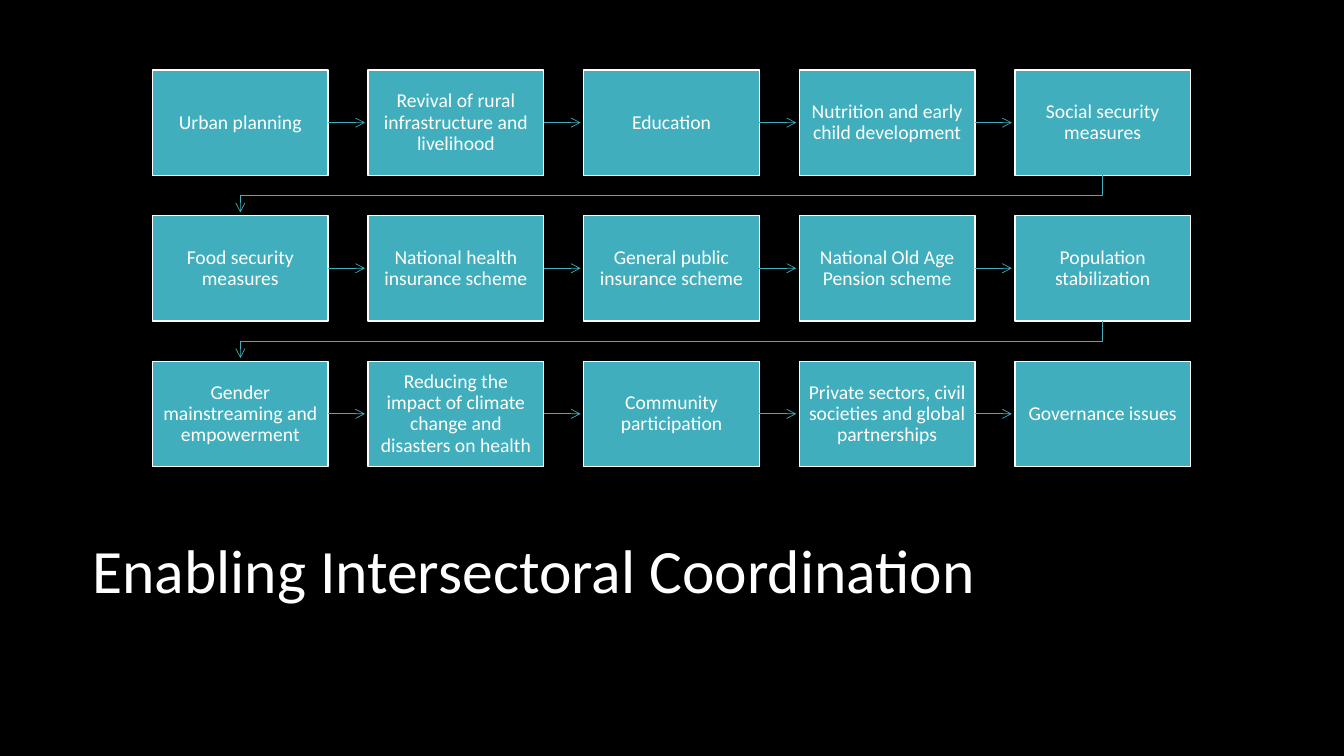
from lxml import etree
from pptx import Presentation
from pptx.dml.color import RGBColor
from pptx.enum.shapes import MSO_CONNECTOR, MSO_SHAPE
from pptx.enum.text import MSO_ANCHOR, MSO_AUTO_SIZE, PP_ALIGN
from pptx.oxml.ns import qn
from pptx.util import Pt

RECTANGLE = MSO_SHAPE.RECTANGLE
STRAIGHT = MSO_CONNECTOR.STRAIGHT
TOP, MIDDLE = MSO_ANCHOR.TOP, MSO_ANCHOR.MIDDLE
LEFT, CENTER = PP_ALIGN.LEFT, PP_ALIGN.CENTER
NO_AUTOFIT = MSO_AUTO_SIZE.NONE

BLACK = RGBColor(0x00, 0x00, 0x00)
WHITE = RGBColor(0xFF, 0xFF, 0xFF)
TEAL = RGBColor(0x41, 0xAE, 0xBD)
FONT = "Calibri"
RIGHT_SIDE = 3

# Grid of sectors, in points
GRID_LEFT, GRID_TOP = 109, 50
BOX_WIDTH, BOX_HEIGHT = 125.4, 75.2
COLUMN_STEP, ROW_STEP = 154, 104
ARROW_GAP = 2.3

SECTOR_ROWS = [
    ["Urban planning",
     "Revival of rural infrastructure and livelihood",
     "Education",
     "Nutrition and early child development",
     "Social security measures"],
    ["Food security measures",
     "National health insurance scheme",
     "General public insurance scheme",
     "National Old Age Pension scheme",
     "Population stabilization"],
    ["Gender mainstreaming and empowerment",
     "Reducing the impact of climate change and disasters on health",
     "Community participation",
     "Private sectors, civil societies and global partnerships",
     "Governance issues"],
]


def write_text(frame, text, size, alignment, anchor, inset):
    frame.word_wrap = True
    frame.auto_size = NO_AUTOFIT
    frame.vertical_anchor = anchor
    frame.margin_left = frame.margin_right = Pt(inset)
    frame.margin_top = frame.margin_bottom = Pt(inset)
    frame.text = text
    paragraph = frame.paragraphs[0]
    paragraph.alignment = alignment
    paragraph.line_spacing = 0.9
    paragraph.font.name = FONT
    paragraph.font.size = Pt(size)
    paragraph.font.color.rgb = WHITE


def add_title(slide, text):
    title = slide.shapes.title
    title.left, title.top = Pt(66), Pt(386)
    title.width, title.height = Pt(828), Pt(101)
    write_text(title.text_frame, text, 44, LEFT, TOP, 0)


def add_sector(slide, column, row, text):
    sector = slide.shapes.add_shape(
        RECTANGLE,
        Pt(GRID_LEFT + column * COLUMN_STEP), Pt(GRID_TOP + row * ROW_STEP),
        Pt(BOX_WIDTH), Pt(BOX_HEIGHT))
    sector.shadow.inherit = False
    sector.fill.solid()
    sector.fill.fore_color.rgb = TEAL
    sector.line.color.rgb = WHITE
    sector.line.width = Pt(1)
    write_text(sector.text_frame, text, 14, CENTER, MIDDLE, 6.5)
    return sector


def style_arrow(arrow):
    arrow.line.color.rgb = TEAL
    arrow.line.width = Pt(0.5)
    properties = arrow.element.spPr
    etree.SubElement(properties.find(qn("a:ln")), qn("a:tailEnd"), type="arrow")
    if properties.find(qn("a:effectLst")) is None:
        etree.SubElement(properties, qn("a:effectLst"))


def add_step_arrow(slide, sector):
    start = sector.left + sector.width
    middle = sector.top + sector.height // 2
    end = sector.left + Pt(COLUMN_STEP - ARROW_GAP)
    arrow = slide.shapes.add_connector(STRAIGHT, start, middle, end, middle)
    arrow.begin_connect(sector, RIGHT_SIDE)
    style_arrow(arrow)


def add_row_arrow(slide, last_sector, first_sector):
    """Lead from the end of one row to the start of the next."""
    start_x = last_sector.left + last_sector.width // 2
    end_x = first_sector.left + first_sector.width // 2
    start_y = last_sector.top + last_sector.height
    turn_y = start_y + Pt(14.7)
    end_y = last_sector.top + Pt(ROW_STEP - ARROW_GAP)
    builder = slide.shapes.build_freeform(start_x, start_y)
    builder.add_line_segments(
        [(start_x, turn_y), (end_x, turn_y), (end_x, end_y)], close=False)
    arrow = builder.convert_to_shape()
    arrow.fill.background()
    style_arrow(arrow)


def main():
    presentation = Presentation()
    presentation.slide_width, presentation.slide_height = Pt(960), Pt(540)
    slide = presentation.slides.add_slide(presentation.slide_layouts[5])
    slide.background.fill.solid()
    slide.background.fill.fore_color.rgb = BLACK

    add_title(slide, "Enabling Intersectoral Coordination")

    # Sectors
    rows = [[add_sector(slide, column, row, text)
             for column, text in enumerate(texts)]
            for row, texts in enumerate(SECTOR_ROWS)]

    # Arrows within each row, then from row to row
    for sectors in rows:
        for sector in sectors[:-1]:
            add_step_arrow(slide, sector)
    for upper, lower in zip(rows, rows[1:]):
        add_row_arrow(slide, upper[-1], lower[0])

    presentation.save("out.pptx")


if __name__ == "__main__":
    main()
